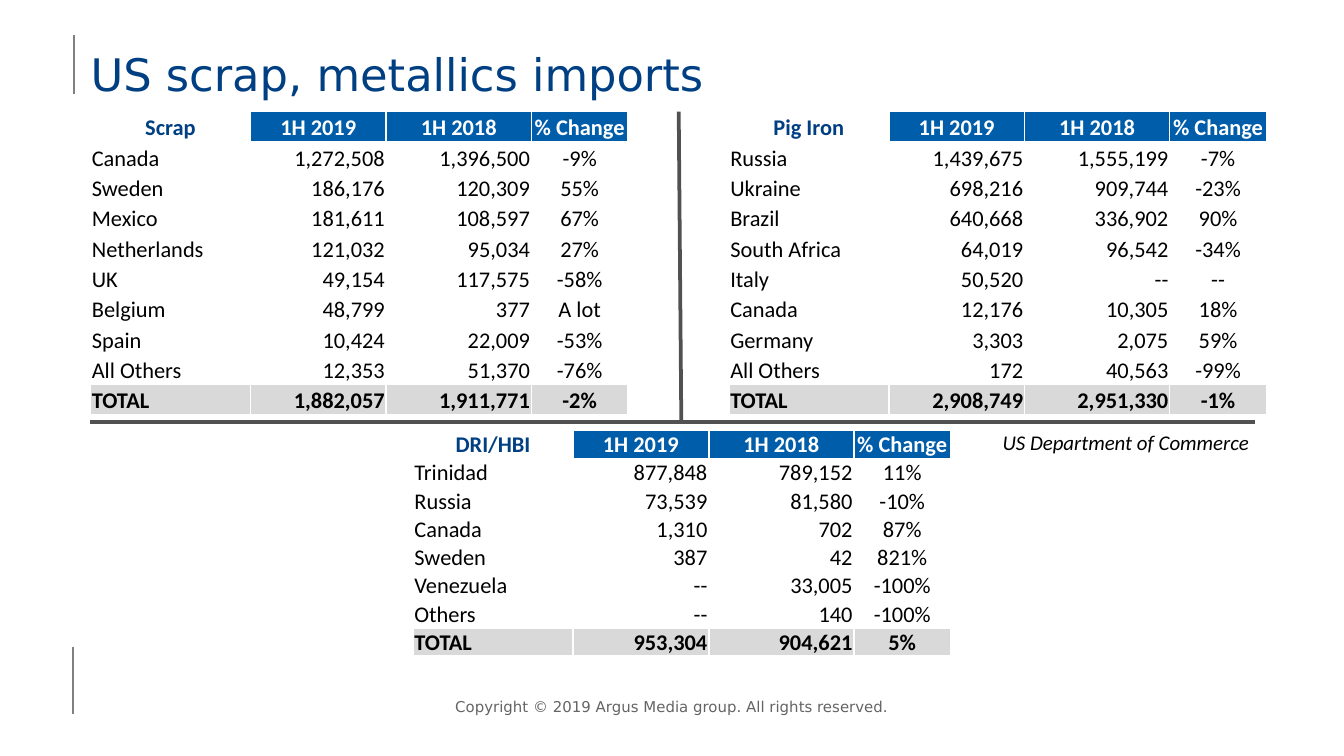
import pptx
import pptx.dml.color
import pptx.enum.shapes
import pptx.enum.text
import pptx.oxml.ns
import pptx.util
from lxml import etree

Pt = pptx.util.Pt
ALIGN = pptx.enum.text.PP_ALIGN
ANCHOR = pptx.enum.text.MSO_ANCHOR

COLORS = {
    "navy": "003F82",
    "blue": "005DAA",
    "white": "FFFFFF",
    "black": "000000",
    "total": "D9D9D9",
    "rule": "505150",
    "accent": "808080",
    "footer": "636463",
}

COLUMN_WIDTHS = [85.68, 72.72, 77.76, 51.84]
COLUMN_ALIGNS = [ALIGN.LEFT, ALIGN.RIGHT, ALIGN.RIGHT, ALIGN.CENTER]
HEADINGS = ["1H 2019", "1H 2018", "% Change"]

SCRAP = [
    ["Canada", "1,272,508", "1,396,500", "-9%"],
    ["Sweden", "186,176", "120,309", "55%"],
    ["Mexico", "181,611", "108,597", "67%"],
    ["Netherlands", "121,032", "95,034", "27%"],
    ["UK", "49,154", "117,575", "-58%"],
    ["Belgium", "48,799", "377", "A lot"],
    ["Spain", "10,424", "22,009", "-53%"],
    ["All Others", "12,353", "51,370", "-76%"],
    ["TOTAL", "1,882,057", "1,911,771", "-2%"],
]
PIG_IRON = [
    ["Russia", "1,439,675", "1,555,199", "-7%"],
    ["Ukraine", "698,216", "909,744", "-23%"],
    ["Brazil", "640,668", "336,902", "90%"],
    ["South Africa", "64,019", "96,542", "-34%"],
    ["Italy", "50,520", "--", "--"],
    ["Canada", "12,176", "10,305", "18%"],
    ["Germany", "3,303", "2,075", "59%"],
    ["All Others", "172", "40,563", "-99%"],
    ["TOTAL", "2,908,749", "2,951,330", "-1%"],
]
DRI_HBI = [
    ["Trinidad", "877,848", "789,152", "11%"],
    ["Russia", "73,539", "81,580", "-10%"],
    ["Canada", "1,310", "702", "87%"],
    ["Sweden", "387", "42", "821%"],
    ["Venezuela", "--", "33,005", "-100%"],
    ["Others", "--", "140", "-100%"],
    ["TOTAL", "953,304", "904,621", "5%"],
]


def rgb(name):
    return pptx.dml.color.RGBColor.from_string(COLORS[name])


def write_text(frame, text, *, size=12, font="Calibri", color="black",
               bold=False, italic=False, align=ALIGN.LEFT):
    para = frame.paragraphs[0]
    para.alignment = align
    span = para.add_run()
    span.text = text
    span.font.size = Pt(size)
    span.font.name = font
    span.font.bold = bold
    span.font.italic = italic
    span.font.color.rgb = rgb(color)


def add_text(slide, text, left, top, width, height, *, anchor=ANCHOR.TOP, **style):
    box = slide.shapes.add_textbox(Pt(left), Pt(top), Pt(width), Pt(height))
    frame = box.text_frame
    frame.word_wrap = True
    frame.vertical_anchor = anchor
    frame.margin_left = frame.margin_right = 0
    frame.margin_top = frame.margin_bottom = 0
    write_text(frame, text, **style)


def add_line(slide, start, end, *, color, width):
    line = slide.shapes.add_connector(
        pptx.enum.shapes.MSO_CONNECTOR.STRAIGHT,
        Pt(start[0]), Pt(start[1]), Pt(end[0]), Pt(end[1]))
    line.line.color.rgb = rgb(color)
    line.line.width = Pt(width)
    etree.SubElement(line._element.spPr, pptx.oxml.ns.qn("a:effectLst"))


def add_borders(cell):
    properties = cell._tc.get_or_add_tcPr()
    for side in ("a:lnL", "a:lnR", "a:lnT", "a:lnB"):
        border = etree.SubElement(properties, pptx.oxml.ns.qn(side), w=str(Pt(1)))
        fill = etree.SubElement(border, pptx.oxml.ns.qn("a:solidFill"))
        etree.SubElement(fill, pptx.oxml.ns.qn("a:srgbClr"), val=COLORS["white"])


def fill_cell(cell, text, fill, anchor=ANCHOR.BOTTOM, **style):
    cell.margin_left = cell.margin_right = cell.margin_top = Pt(0.72)
    cell.margin_bottom = 0
    cell.vertical_anchor = anchor
    add_borders(cell)
    cell.fill.solid()
    cell.fill.fore_color.rgb = rgb(fill)
    write_text(cell.text_frame, text, **style)


def add_import_table(slide, name, rows, left, top, row_height):
    count = len(rows) + 1
    table = slide.shapes.add_table(
        count, len(COLUMN_WIDTHS), Pt(left), Pt(top),
        Pt(sum(COLUMN_WIDTHS)), Pt(row_height * count)).table
    table.horz_banding = False
    for column, width in zip(table.columns, COLUMN_WIDTHS):
        column.width = Pt(width)
    for row in table.rows:
        row.height = Pt(row_height)

    # Heading row
    fill_cell(table.cell(0, 0), name, "white", ANCHOR.MIDDLE,
              color="navy", bold=True, align=ALIGN.CENTER)
    for column, heading in enumerate(HEADINGS, 1):
        fill_cell(table.cell(0, column), heading, "blue",
                  color="white", bold=True, align=ALIGN.CENTER)

    # Countries and total
    for index, values in enumerate(rows, 1):
        is_total = values[0] == "TOTAL"
        for column, value in enumerate(values):
            fill_cell(table.cell(index, column), value,
                      "total" if is_total else "white",
                      bold=is_total, align=COLUMN_ALIGNS[column])


def main():
    deck = pptx.Presentation()
    deck.slide_width, deck.slide_height = Pt(720), Pt(405)
    slide = deck.slides.add_slide(deck.slide_layouts[6])

    # Margin accents, title and footer
    add_line(slide, (39.6, 50.4), (39.6, 18.9), color="accent", width=0.75)
    add_line(slide, (39.2, 382.5), (39.2, 346.5), color="accent", width=0.75)
    add_text(slide, "US scrap, metallics imports", 48.5, 18, 630, 36,
             size=24, font="DejaVu Sans", color="navy", anchor=ANCHOR.BOTTOM)
    add_text(slide, "Copyright © 2019 Argus Media group. All rights reserved.",
             235.4, 364.3, 249.2, 28.8, size=8, font="DejaVu Sans",
             color="footer", anchor=ANCHOR.MIDDLE, align=ALIGN.CENTER)

    # Import tables
    add_import_table(slide, "Scrap", SCRAP, 48.5, 59.8, 16.25)
    add_import_table(slide, "Pig Iron", PIG_IRON, 390.5, 59.8, 16.25)
    add_import_table(slide, "DRI/HBI", DRI_HBI, 221.3, 230.4, 15.12)

    # Dividers between the tables
    add_line(slide, (363.6, 59.8), (365, 226.1), color="rule", width=2)
    add_line(slide, (48.5, 226.1), (672.5, 226.1), color="rule", width=2)

    # Data source
    add_text(slide, "US Department of Commerce", 537.1, 230.4, 182.9, 10.8,
             size=11.2, italic=True)

    deck.save("out.pptx")


if __name__ == "__main__":
    main()
